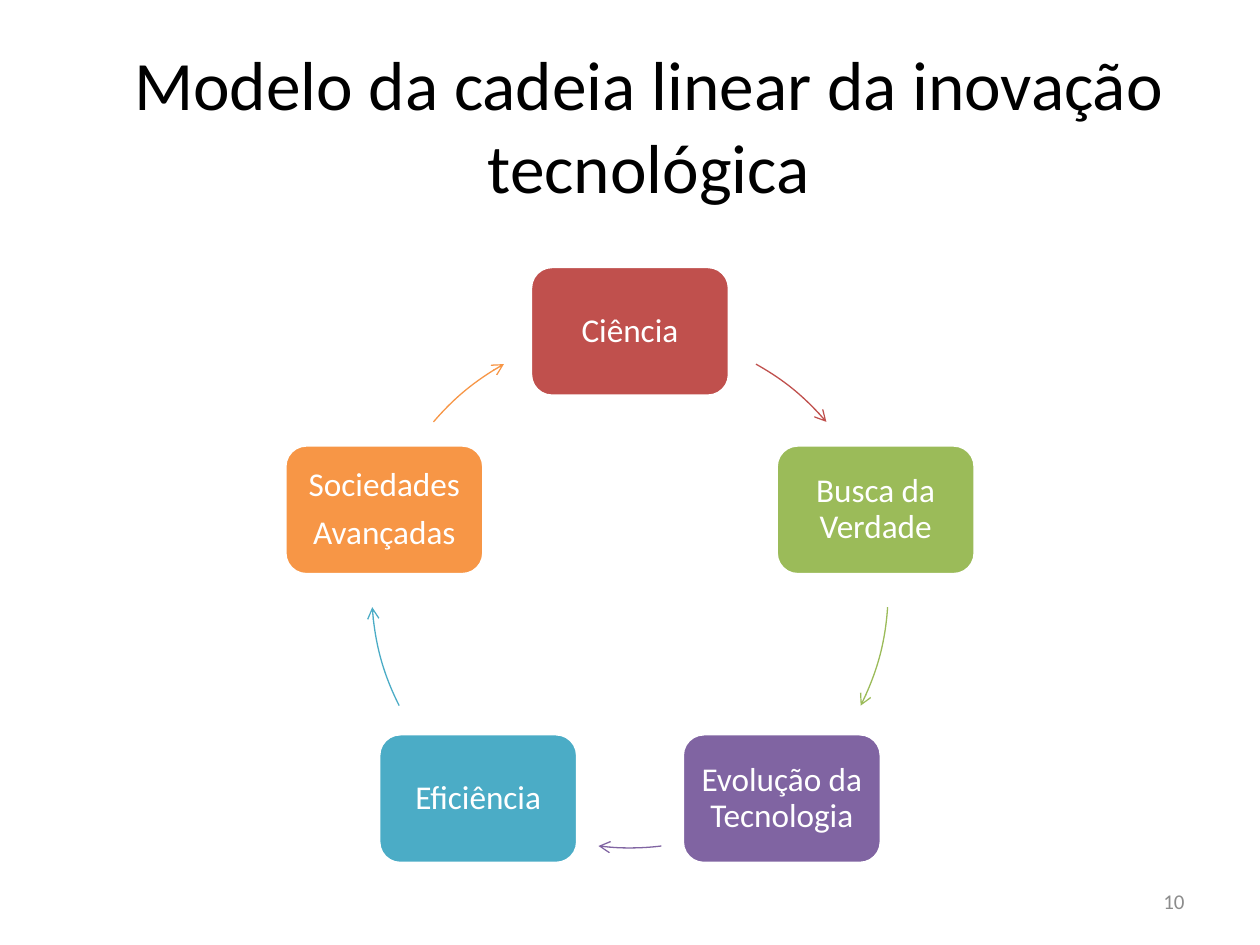
"""Build a slide showing the innovation chain as a cycle of five linked steps."""
from math import cos, radians, sin

from lxml import etree
from pptx import Presentation
from pptx.dml.color import RGBColor
from pptx.enum.shapes import MSO_SHAPE
from pptx.enum.text import MSO_ANCHOR, PP_ALIGN
from pptx.oxml.ns import qn
from pptx.util import Inches, Pt

ROUNDED, ARC = MSO_SHAPE.ROUNDED_RECTANGLE, MSO_SHAPE.ARC
MIDDLE = MSO_ANCHOR.MIDDLE
CENTER, RIGHT = PP_ALIGN.CENTER, PP_ALIGN.RIGHT

THEME = {
    "font": "Calibri",
    "title": {"size": 39.6, "color": "000000"},
    "step": {"size": 19, "color": "FFFFFF"},
    "number": {"size": 12, "color": "8C8C8C"},
    "border": "FFFFFF",
}
STEPS = [
    (["Ciência"], "C0504D", (299.2, 319.5)),
    (["Busca da Verdade"], "9BBB59", (3.9, 26.7)),
    (["Evolução da Tecnologia"], "8064A2", (83, 97)),
    (["Eficiência"], "4BACC6", (153.3, 176.1)),
    (["Sociedades", "Avançadas"], "F79646", (220.5, 240.8)),
]
CENTER_X, CENTER_Y, RADIUS = 5, 4.68, 2.05
STEP_WIDTH, STEP_HEIGHT = 1.58, 1.03
ARC_UNITS_PER_DEGREE = 0.6


def write(shape, lines, style, inset=None, **formats):
    frame = shape.text_frame
    frame.word_wrap = True
    frame.vertical_anchor = MIDDLE
    if inset is not None:
        for side in ("left", "top", "right", "bottom"):
            setattr(frame, f"margin_{side}", Inches(inset))
    for index, line in enumerate(lines):
        para = frame.add_paragraph() if index else frame.paragraphs[0]
        for name, value in formats.items():
            setattr(para, name, value)
        span = para.add_run()
        span.text = line
        span.font.name = THEME["font"]
        span.font.size = Pt(THEME[style]["size"])
        span.font.color.rgb = RGBColor.from_string(THEME[style]["color"])


def outline(shape, color, width):
    shape.shadow.inherit = False
    shape.line.color.rgb = RGBColor.from_string(color)
    shape.line.width = Pt(width)


deck = Presentation()
deck.slide_width, deck.slide_height = Inches(10), Inches(7.5)
page = deck.slides.add_slide(deck.slide_layouts[6])

title = page.shapes.add_textbox(Inches(0.65), Inches(0.36), Inches(9), Inches(1.25))
write(title, ["Modelo da cadeia linear da inovação tecnológica"], "title", alignment=CENTER)

number = page.shapes.add_textbox(Inches(7.17), Inches(6.95), Inches(2.33), Inches(0.4))
write(number, ["10"], "number", alignment=RIGHT)

for index, (lines, color, angles) in enumerate(STEPS):
    turn = radians(index * 360 / len(STEPS) - 90)
    left = CENTER_X + RADIUS * cos(turn) - STEP_WIDTH / 2
    top = CENTER_Y + RADIUS * sin(turn) - STEP_HEIGHT / 2
    box = page.shapes.add_shape(
        ROUNDED, Inches(left), Inches(top), Inches(STEP_WIDTH), Inches(STEP_HEIGHT)
    )
    box.fill.solid()
    box.fill.fore_color.rgb = RGBColor.from_string(color)
    outline(box, THEME["border"], 2)
    write(box, lines, "step", inset=0.08,
          alignment=CENTER, line_spacing=0.9, space_after=Pt(6.65))

    arrow = page.shapes.add_shape(
        ARC, Inches(CENTER_X - RADIUS), Inches(CENTER_Y - RADIUS),
        Inches(2 * RADIUS), Inches(2 * RADIUS)
    )
    for position, angle in enumerate(angles):
        arrow.adjustments[position] = angle * ARC_UNITS_PER_DEGREE
    arrow.fill.background()
    outline(arrow, color, 0.75)
    etree.SubElement(arrow.line._get_or_add_ln(), qn("a:tailEnd"), type="arrow")

deck.save("out.pptx")
